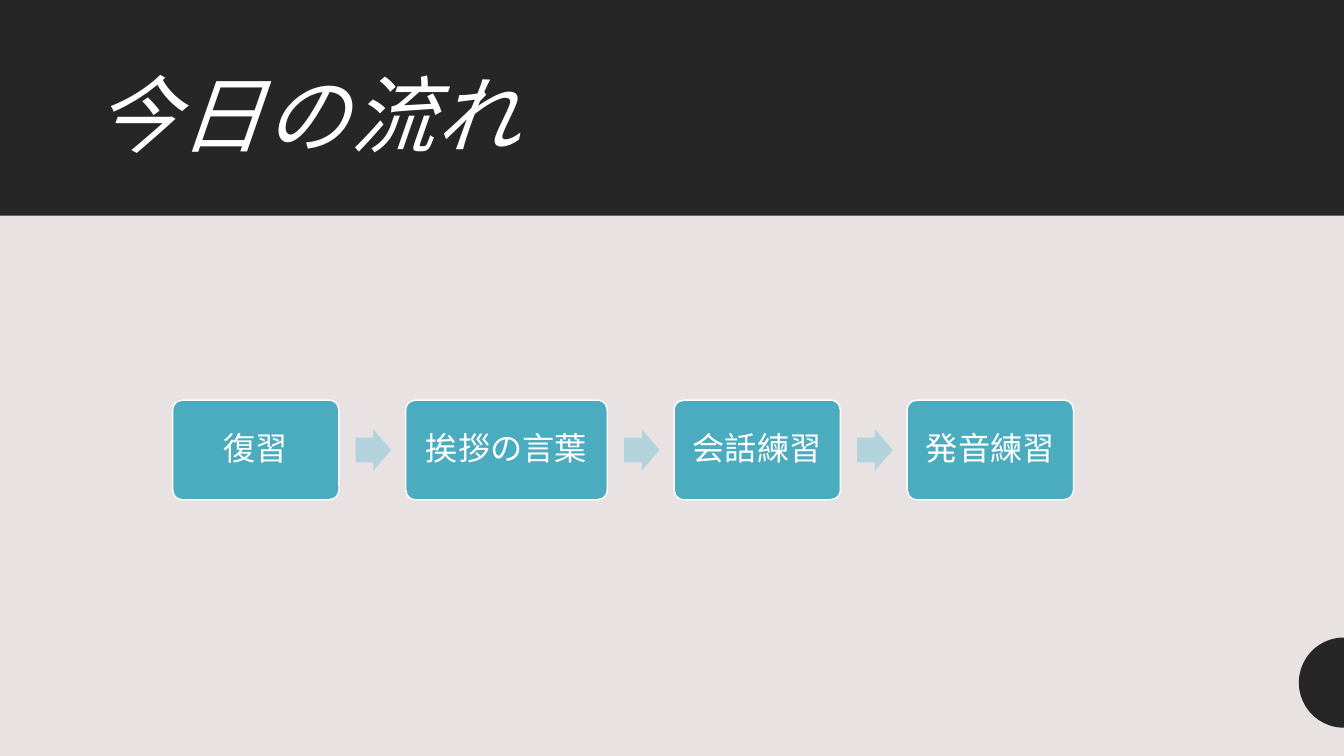
from math import cos, pi, sin

from pptx import Presentation
from pptx.dml.color import RGBColor
from pptx.enum.shapes import MSO_SHAPE
from pptx.enum.text import MSO_ANCHOR, MSO_AUTO_SIZE, PP_ALIGN
from pptx.util import Pt

RECT = MSO_SHAPE.RECTANGLE
ROUND = MSO_SHAPE.ROUNDED_RECTANGLE
ARROW = MSO_SHAPE.RIGHT_ARROW
MIDDLE = MSO_ANCHOR.MIDDLE
NO_FIT = MSO_AUTO_SIZE.NONE
LEFT, CENTER = PP_ALIGN.LEFT, PP_ALIGN.CENTER

WIDE, HIGH = 960, 540


def color(code):
    return RGBColor.from_string(code)


class Deck:
    dark, pale, white = "262626", "E8E2E3", "FFFFFF"
    teal, light = "4BACC0", "B2D2DC"
    head, body = "Calibri", "Roboto"

    def __init__(self):
        self.prs = Presentation()
        self.prs.slide_width, self.prs.slide_height = Pt(WIDE), Pt(HIGH)
        self.slide = self.prs.slides.add_slide(self.prs.slide_layouts[5])
        back = self.slide.background.fill
        back.solid()
        back.fore_color.rgb = color(self.pale)

    def paint(self, shape, fill, line=None):
        shape.shadow.inherit = False
        shape.fill.solid()
        shape.fill.fore_color.rgb = color(fill)
        if line:
            shape.line.color.rgb = color(line)
            shape.line.width = Pt(1)
        else:
            shape.line.fill.background()

    def shape(self, kind, x, y, w, h, fill, line=None, adjust=()):
        item = self.slide.shapes.add_shape(kind, Pt(x), Pt(y), Pt(w), Pt(h))
        self.paint(item, fill, line)
        for i, value in enumerate(adjust):
            item.adjustments[i] = value
        return item

    def label(self, shape, text, font, size, align):
        frame = shape.text_frame
        frame.text = text
        frame.word_wrap = True
        frame.auto_size = NO_FIT
        frame.vertical_anchor = MIDDLE
        para = frame.paragraphs[0]
        para.alignment = align
        para.line_spacing = 0.9
        run = para.runs[0]
        run.font.name = font
        run.font.size = Pt(size)
        run.font.color.rgb = color(self.white)
        return run

    def title(self, text, x, y, w, h):
        item = self.slide.shapes.title
        item.left, item.top, item.width, item.height = Pt(x), Pt(y), Pt(w), Pt(h)
        run = self.label(item, text, self.head, 60, LEFT)
        run.font.italic = True
        run.font._element.set("spc", "100")
        # Bring the title in front of the band
        self.slide.shapes._spTree.append(item._element)

    def step(self, text, x, y, w, h):
        box = self.shape(ROUND, x, y, w, h, self.teal, self.white, [0.1])
        self.label(box, text, self.body, 23, CENTER)

    def arrow(self, x, mid, w, h):
        self.shape(ARROW, x, mid - h / 2, w, h, self.light, adjust=[0.6, 0.5])

    def half(self, x, y, radius, count=48):
        turns = [pi / 2 + pi * i / count for i in range(count + 1)]
        dots = [(Pt(x + radius * cos(t)), Pt(y + radius * sin(t))) for t in turns]
        form = self.slide.shapes.build_freeform(*dots[0])
        form.add_line_segments(dots[1:], close=True)
        self.paint(form.convert_to_shape(), self.dark)


def main():
    deck = Deck()

    # Header band and title
    deck.shape(RECT, 0, 0, WIDE, 154, deck.dark)
    deck.title("今日の流れ", 60, 33, 840, 104.5)

    # Half disc on the right edge
    deck.half(WIDE, 487.6, 32.2)

    # Steps of the lesson, joined by arrows
    steps = [("復習", 118.8), ("挨拶の言葉", 144), ("会話練習", 118.8), ("発音練習", 118.8)]
    x, top, tall, gap = 123.3, 285.8, 71.2, 47.7
    for i, (text, wide) in enumerate(steps):
        if i:
            deck.arrow(x - gap + 12, top + tall / 2, 25.3, 29.5)
        deck.step(text, x, top, wide, tall)
        x += wide + gap

    deck.prs.save("out.pptx")


if __name__ == "__main__":
    main()
